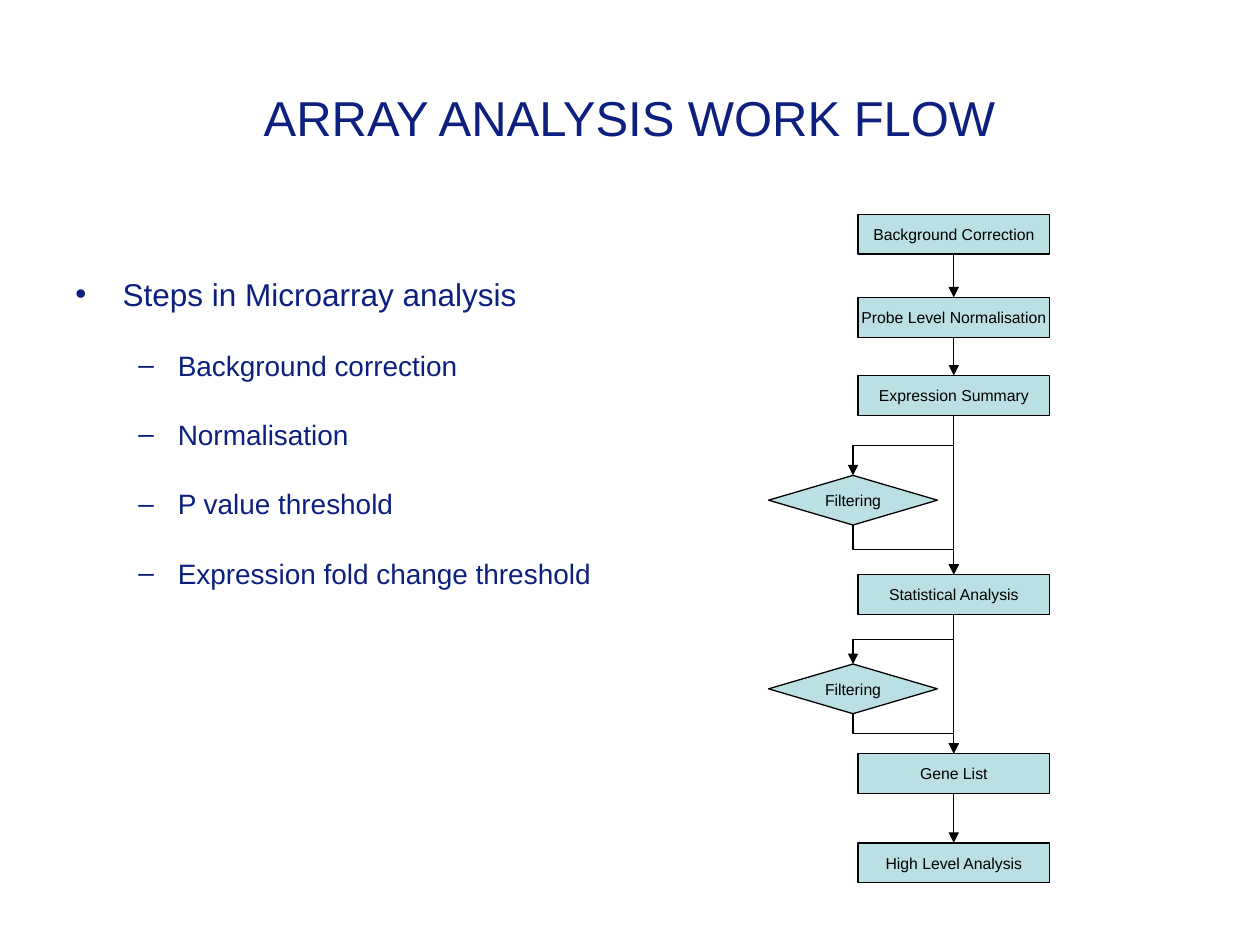
import pptx
import pptx.util
import pptx.dml.color
import pptx.enum.shapes
import pptx.enum.text
import pptx.oxml
import pptx.oxml.ns

# Lengths are cells of a 100 by 75 grid laid over the slide.
COLS, ROWS = 100, 75
CELL = pptx.util.Inches(0.1)
COLORS = {"text": "0E207F", "fill": "BBE0E3", "line": "000000"}
FONT = "Arial"
STEP_MID, TEST_MID = 75.7, 67.7
STEP_SIZE, TEST_SIZE = (15.2, 3.16), (13.4, 3.94)
STEPS = [
    ("Background Correction", 17),
    ("Probe Level Normalisation", 23.6),
    ("Expression Summary", 29.8),
    ("Statistical Analysis", 45.6),
    ("Gene List", 59.8),
    ("High Level Analysis", 66.9),
]
TESTS = [("Filtering", 37.73, 2), ("Filtering", 52.7, 3)]  # text, top, step before
POINTS = [
    "Background correction",
    "Normalisation",
    "P value threshold",
    "Expression fold change threshold",
]
SHAPE = pptx.enum.shapes.MSO_SHAPE
LINK = pptx.enum.shapes.MSO_CONNECTOR
ALIGN = pptx.enum.text.PP_ALIGN
ANCHOR = pptx.enum.text.MSO_ANCHOR


def cells(*counts):
    return [round(count * CELL) for count in counts]


def color(name):
    return pptx.dml.color.RGBColor.from_string(COLORS[name])


def style(para, size, name):
    for run in para.runs:
        run.font.name = FONT
        run.font.size = pptx.util.Pt(size)
        run.font.color.rgb = color(name)


def add_xml(parent, tag, **attrs):
    child = pptx.oxml.ns.qn(tag)
    node = parent.makeelement(child, attrs)
    parent.append(node)
    return node


def add_title(slide, text):
    frame = slide.shapes.add_textbox(*cells(6.2, 3, 87.5, 12.5)).text_frame
    frame.word_wrap = True
    frame.vertical_anchor = ANCHOR.MIDDLE
    frame.text = text
    para = frame.paragraphs[0]
    para.alignment = ALIGN.CENTER
    style(para, 28, "text")


def set_bullet(para, mark, left, hang):
    """Give a paragraph its bullet, hanging indent and spacing."""
    para.line_spacing = 1.9
    props = para._p.get_or_add_pPr()
    left, hang = cells(left, hang)
    props.set("marL", str(left))
    props.set("indent", str(-hang))
    add_xml(add_xml(props, "a:spcBef"), "a:spcPct", val="20000")
    add_xml(props, "a:buFont", typeface=FONT)
    add_xml(props, "a:buChar", char=mark)


def add_list(slide, head, points):
    frame = slide.shapes.add_textbox(*cells(5, 18.6, 44.2, 51.2)).text_frame
    frame.word_wrap = True
    frame.text = "\n".join([head] + points)
    first, *rest = frame.paragraphs
    set_bullet(first, "•", 3.75, 3.75)
    style(first, 18, "text")
    for para in rest:
        para.level = 1
        set_bullet(para, "–", 8.13, 3.13)
        style(para, 16, "text")


def add_node(slide, kind, text, mid, top, size):
    wide, high = size
    node = slide.shapes.add_shape(kind, *cells(mid - wide / 2, top, wide, high))
    node.shadow.inherit = False
    node.fill.solid()
    node.fill.fore_color.rgb = color("fill")
    node.line.color.rgb = color("line")
    node.line.width = pptx.util.Pt(0.75)
    frame = node.text_frame
    frame.word_wrap = False
    frame.vertical_anchor = ANCHOR.MIDDLE
    frame.text = text
    para = frame.paragraphs[0]
    para.alignment = ALIGN.CENTER
    style(para, 9, "line")
    return node


def ends(start, stop):
    """Return the bottom middle of one node and the top middle of the next."""
    return (start.left + start.width // 2, start.top + start.height,
            stop.left + stop.width // 2, stop.top)


def add_arrow(slide, kind, *spots):
    arrow = slide.shapes.add_connector(kind, *spots)
    arrow.line.color.rgb = color("line")
    arrow.line.width = pptx.util.Pt(0.75)
    add_xml(arrow.line._get_or_add_ln(), "a:tailEnd", type="triangle")
    add_xml(arrow._element.spPr, "a:effectLst")
    return arrow


def join_down(slide, start, stop):
    arrow = add_arrow(slide, LINK.STRAIGHT, *ends(start, stop))
    arrow.begin_connect(start, 2)
    arrow.end_connect(stop, 0)


def join_bent(slide, start, stop):
    """Draw an elbow that runs down, across and down, as a turned connector."""
    x1, y1, x2, y2 = ends(start, stop)
    wide, high = y2 - y1, abs(x2 - x1)
    left, top = (x1 + x2 - wide) // 2, (y1 + y2 - high) // 2
    arrow = add_arrow(slide, LINK.ELBOW, left, top, left + wide, top + high)
    frame = arrow._element.spPr.find(pptx.oxml.ns.qn("a:xfrm"))
    turn = 90 if x2 < x1 else 270
    frame.set("rot", str(turn * 60000))
    if turn == 270:
        frame.set("flipH", "1")


def add_flow(slide):
    steps = [add_node(slide, SHAPE.FLOWCHART_PROCESS, text, STEP_MID, top, STEP_SIZE)
             for text, top in STEPS]
    for start, stop in zip(steps, steps[1:]):
        join_down(slide, start, stop)
    for text, top, prior in TESTS:
        test = add_node(slide, SHAPE.FLOWCHART_DECISION, text, TEST_MID, top, TEST_SIZE)
        join_bent(slide, steps[prior], test)
        join_bent(slide, test, steps[prior + 1])


def main():
    deck = pptx.Presentation()
    deck.slide_width, deck.slide_height = cells(COLS, ROWS)
    slide = deck.slides.add_slide(deck.slide_layouts[6])
    add_title(slide, "ARRAY ANALYSIS WORK FLOW")
    add_list(slide, "Steps in Microarray analysis", POINTS)
    add_flow(slide)
    deck.save("out.pptx")


if __name__ == "__main__":
    main()
